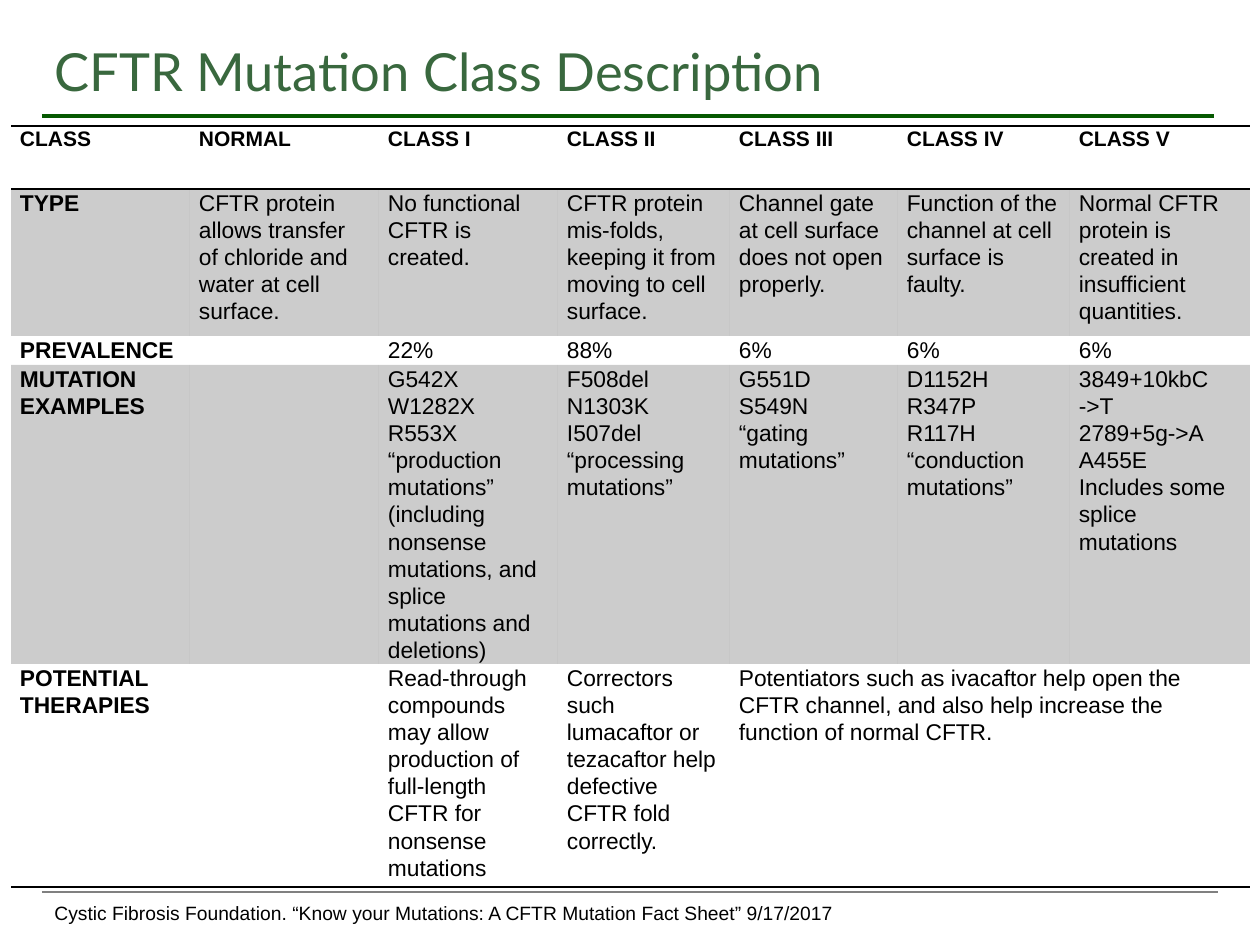
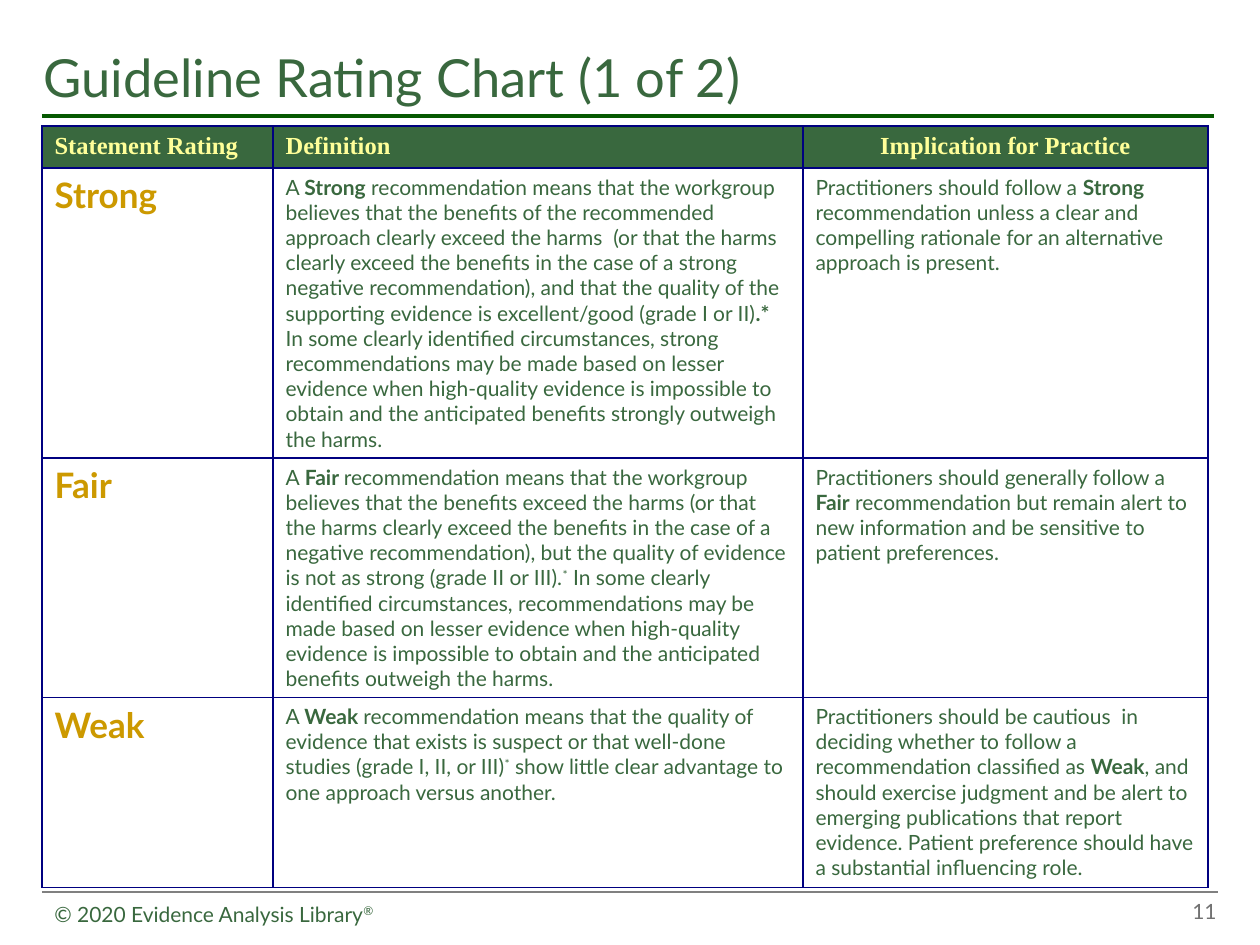
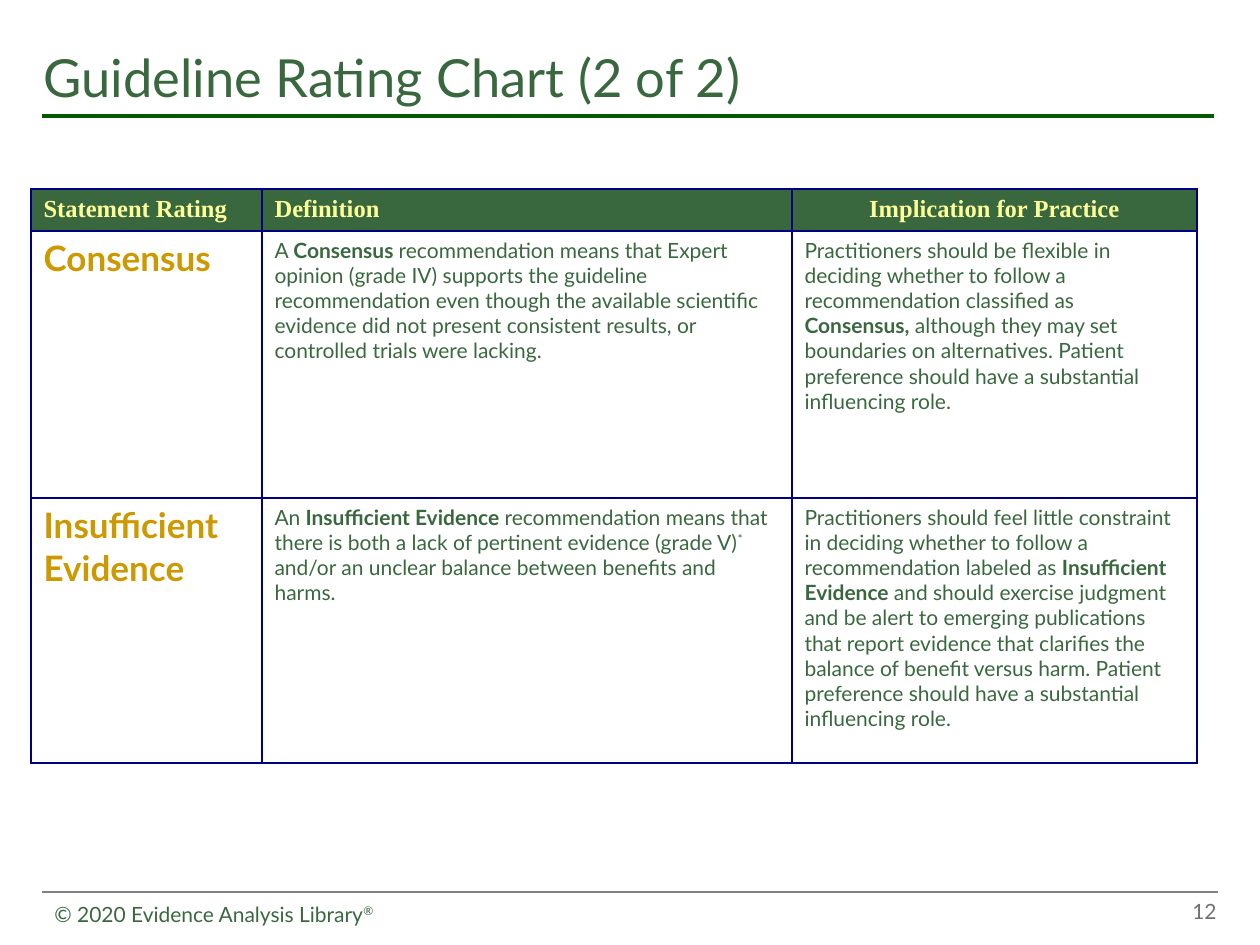
from lxml import etree
from pptx import Presentation
from pptx import util as u
from pptx.dml.color import RGBColor
from pptx.enum import shapes, text
from pptx.oxml import ns

PX = u.Inches(1) / 126
GREEN, RULE_GREEN, GOLD, CREAM = "39683E", "065901", "CC9900", "FFFF99"
BLACK, WHITE, GRAY, NAVY, NUMBER_GRAY = "000000", "FFFFFF", "808080", "000080", "717171"
NO_STYLE = "{2D5ABB26-0587-4C30-8999-92F81FD0307C}"
RATING_COLUMNS = [231, 530, 405]
RATING_HEADINGS = ["Statement Rating", "Definition", "Implication for Practice"]

MUTATION_COLUMNS = [179, 189, 179, 172, 168, 172, 180]
MUTATION_ROWS = [63, 147, 29, 299, 223]
MUTATIONS = [
    ["CLASS", "NORMAL", "CLASS I", "CLASS II", "CLASS III", "CLASS IV", "CLASS V"],
    ["TYPE",
     "CFTR protein allows transfer of chloride and water at cell surface.",
     "No functional CFTR is created.",
     "CFTR protein mis-folds, keeping it from moving to cell surface.",
     "Channel gate at cell surface does not open properly.",
     "Function of the channel at cell surface is faulty.",
     "Normal CFTR protein is created in insufficient quantities."],
    ["PREVALENCE", "", "22%", "88%", "6%", "6%", "6%"],
    ["MUTATION EXAMPLES", "",
     "G542X\nW1282X\nR553X\n“production mutations”\n"
     "(including nonsense mutations, and splice mutations and deletions)",
     "F508del\nN1303K\nI507del\n“processing mutations”",
     "G551D\nS549N\n“gating mutations”",
     "D1152H\nR347P\nR117H\n“conduction mutations”",
     "3849+10kbC ->T\n2789+5g->A\nA455E\nIncludes some splice mutations"],
    ["POTENTIAL THERAPIES", "",
     "Read-through compounds may allow production of full-length CFTR for "
     "nonsense mutations",
     "Correctors such lumacaftor or tezacaftor help defective CFTR fold correctly.",
     "Potentiators such as ivacaftor help open the CFTR channel, and also help "
     "increase the function of normal CFTR."],
]

# In these texts |...| is bold and ^...^ is superscript.
RATINGS_1 = [
    ["Strong",
     "A |Strong| recommendation means that the workgroup believes that the benefits of "
     "the recommended approach clearly exceed the harms  (or that the harms clearly "
     "exceed the benefits in the case of a strong negative recommendation), and that the "
     "quality of the supporting evidence is excellent/good (grade I or II)|.*| In some "
     "clearly identified circumstances, strong recommendations may be made based on "
     "lesser evidence when high-quality evidence is impossible to obtain and the "
     "anticipated benefits strongly outweigh the harms.",
     "Practitioners should follow a |Strong |recommendation unless a clear and compelling "
     "rationale for an alternative approach is present."],
    ["Fair",
     "A| Fair |recommendation means that the workgroup believes that the benefits exceed "
     "the harms (or that the harms clearly exceed the benefits in the case of a negative "
     "recommendation), but the quality of evidence is not as strong (grade II or III).^*^ "
     "In some clearly identified circumstances, recommendations may be made based on "
     "lesser evidence when high-quality evidence is impossible to obtain and the "
     "anticipated benefits outweigh the harms.",
     "Practitioners should generally follow a |Fair| recommendation but remain alert to "
     "new information and be sensitive to patient preferences."],
    ["Weak",
     "A |Weak |recommendation means that the quality of evidence that exists is suspect "
     "or that well-done studies (grade I, II, or III)^*^ show little clear advantage to "
     "one approach versus another.",
     "Practitioners should be cautious  in deciding whether to follow a recommendation "
     "classified as |Weak|, and should exercise judgment and be alert to emerging "
     "publications that report evidence. Patient preference should have a substantial "
     "influencing role."],
]
RATINGS_2 = [
    ["Consensus",
     "A |Consensus |recommendation means that Expert opinion (grade IV) supports the "
     "guideline recommendation even though the available scientific evidence did not "
     "present consistent results, or controlled trials were lacking.",
     "Practitioners should be flexible in deciding whether to follow a recommendation "
     "classified as |Consensus,| although they may set boundaries on alternatives. "
     "Patient preference should have a substantial influencing role."],
    ["Insufficient Evidence",
     "An| Insufficient Evidence |recommendation means that there is both a lack of "
     "pertinent evidence (grade V)^*^ and/or an unclear balance between benefits and harms.",
     "Practitioners should feel little constraint in deciding whether to follow a "
     "recommendation labeled as| Insufficient Evidence |and should exercise judgment and "
     "be alert to emerging publications that report evidence that clarifies the balance "
     "of benefit versus harm. Patient preference should have a substantial influencing "
     "role."],
]


def px(length):
    return u.Emu(round(length * PX))


def rgb(color):
    return RGBColor.from_string(color)


def write(para, marked, size, color, font="Lato", bold=False, align=text.PP_ALIGN.LEFT):
    """Fill a paragraph; |...| marks bold and ^...^ superscript."""
    para.alignment = align
    para.font.name, para.font.size, para.font.bold = font, u.Pt(size), bold
    para.font.color.rgb = rgb(color)
    if not marked:
        para._p.get_or_add_endParaRPr().set("sz", str(size * 100))
    for i, part in enumerate(marked.split("|")):
        for j, piece in enumerate(part.split("^")):
            if not piece:
                continue
            span = para.add_run()
            span.text = piece
            if i % 2:
                span.font.bold = True
            if j % 2:
                span.font._element.set("baseline", "30000")


def add_rule(page, left, right, y, color, width):
    rule = page.shapes.add_connector(
        shapes.MSO_CONNECTOR.STRAIGHT, px(left), px(y), px(right), px(y))
    rule.line.color.rgb = rgb(color)
    rule.line.width = u.Pt(width)
    etree.SubElement(rule._element.spPr, ns.qn("a:effectLst"))


def add_page(deck, title, left, top, anchor):
    page = deck.slides.add_slide(deck.slide_layouts[5])
    add_rule(page, 42, 1218, 892, GRAY, 1)
    add_rule(page, 42, 1214, 116, RULE_GREEN, 2.25)
    box = page.shapes.title
    box.left, box.top, box.width, box.height = px(left), px(top), px(1134), px(78)
    frame = box.text_frame
    frame.auto_size = text.MSO_AUTO_SIZE.NONE
    frame.vertical_anchor = anchor
    write(frame.paragraphs[0], title, 30, GREEN)
    return page


def add_text(page, left, top, width, height, marked, size, color, wrap=True,
             anchor=text.MSO_ANCHOR.TOP, **style):
    frame = page.shapes.add_textbox(px(left), px(top), px(width), px(height)).text_frame
    frame.word_wrap = wrap
    frame.vertical_anchor = anchor
    write(frame.paragraphs[0], marked, size, color, **style)


def add_table(page, left, top, columns, rows):
    table = page.shapes.add_table(len(rows), len(columns), px(left), px(top),
                                  px(sum(columns)), px(sum(rows))).table
    table.first_row = table.horz_banding = False
    table._tbl.tblPr.find(ns.qn("a:tableStyleId")).text = NO_STYLE
    for column, width in zip(table.columns, columns):
        column.width = px(width)
    for row, height in zip(table.rows, rows):
        row.height = px(height)
    return table


def set_margins(cell, side, end):
    cell.margin_left = cell.margin_right = px(side)
    cell.margin_top = cell.margin_bottom = px(end)


def set_borders(cell, sides, color):
    """Draw 1 pt borders on the sides, given in the order L, R, T, B, before any fill."""
    for side in sides:
        line = etree.SubElement(cell._tc.get_or_add_tcPr(), ns.qn(f"a:ln{side}"), w="12700")
        fill = etree.SubElement(line, ns.qn("a:solidFill"))
        etree.SubElement(fill, ns.qn("a:srgbClr"), val=color)


def set_fill(cell, color, percent=100):
    cell.fill.solid()
    cell.fill.fore_color.rgb = rgb(color)
    if percent < 100:
        tone = cell._tc.tcPr.find(f"{ns.qn('a:solidFill')}/{ns.qn('a:srgbClr')}")
        etree.SubElement(tone, ns.qn("a:alpha"), val=str(percent * 1000))


def add_mutation_table(page):
    table = add_table(page, 11, 126, MUTATION_COLUMNS, MUTATION_ROWS)
    last = len(MUTATION_ROWS) - 1
    table.cell(last, 4).merge(table.cell(last, 6))
    for r, texts in enumerate(MUTATIONS):
        for c in range(len(MUTATION_COLUMNS)):
            cell = table.cell(r, c)
            set_margins(cell, 9, 0)
            set_borders(cell, {0: "TB", last: "B"}.get(r, ""), BLACK)
            if r % 2:
                set_fill(cell, BLACK, 20)
            else:
                cell.fill.background()
            lines = texts[c].split("\n") if c < len(texts) else []
            for i, line in enumerate(lines):
                frame = cell.text_frame
                para = frame.add_paragraph() if i else frame.paragraphs[0]
                para.line_spacing = 1.07
                write(para, line, 13 if r else 12, BLACK, "Arial", bold=r == 0 or c == 0)


def add_rating_table(page, left, top, rows, ratings):
    table = add_table(page, left, top, RATING_COLUMNS, rows)
    for r, texts in enumerate([RATING_HEADINGS] + ratings):
        for c, marked in enumerate(texts):
            cell = table.cell(r, c)
            set_margins(cell, 12.6, 6.3)
            set_borders(cell, "LRTB", NAVY)
            set_fill(cell, WHITE if r else GREEN)
            para = cell.text_frame.paragraphs[0]
            if r == 0:
                align = text.PP_ALIGN.CENTER if c == 2 else text.PP_ALIGN.LEFT
                write(para, marked, 14, CREAM, "Times New Roman", True, align)
            elif c == 0:
                write(para, marked, 20, GOLD, bold=True)
            else:
                write(para, marked, 12, GREEN)


def add_rating_page(deck, title, number, table_left, table_top, rows, ratings):
    page = add_page(deck, title, 31, 39, text.MSO_ANCHOR.TOP)
    add_rating_table(page, table_left, table_top, rows, ratings)
    add_text(page, 935, 895, 294, 32, number, 12, NUMBER_GRAY,
             anchor=text.MSO_ANCHOR.MIDDLE, align=text.PP_ALIGN.RIGHT)
    add_text(page, 42, 895, 353, 38, "© 2020 Evidence Analysis Library^®^",
             12, GREEN, wrap=False)


def main():
    deck = Presentation()
    deck.slide_width, deck.slide_height = px(1260), px(945)

    page = add_page(deck, "CFTR Mutation Class Description", 42, 32, text.MSO_ANCHOR.MIDDLE)
    add_mutation_table(page)
    add_text(page, 42, 895, 1134, 35,
             "Cystic Fibrosis Foundation. “Know your Mutations: A CFTR Mutation Fact Sheet” "
             "9/17/2017", 11, BLACK, font="Arial")

    add_rating_page(deck, "Guideline Rating Chart (1 of 2)", "11", 42, 126,
                    [42, 290, 239, 190], RATINGS_1)
    add_rating_page(deck, "Guideline Rating Chart (2 of 2)", "12", 31, 189,
                    [42, 267, 265], RATINGS_2)
    deck.save("out.pptx")


if __name__ == "__main__":
    main()
